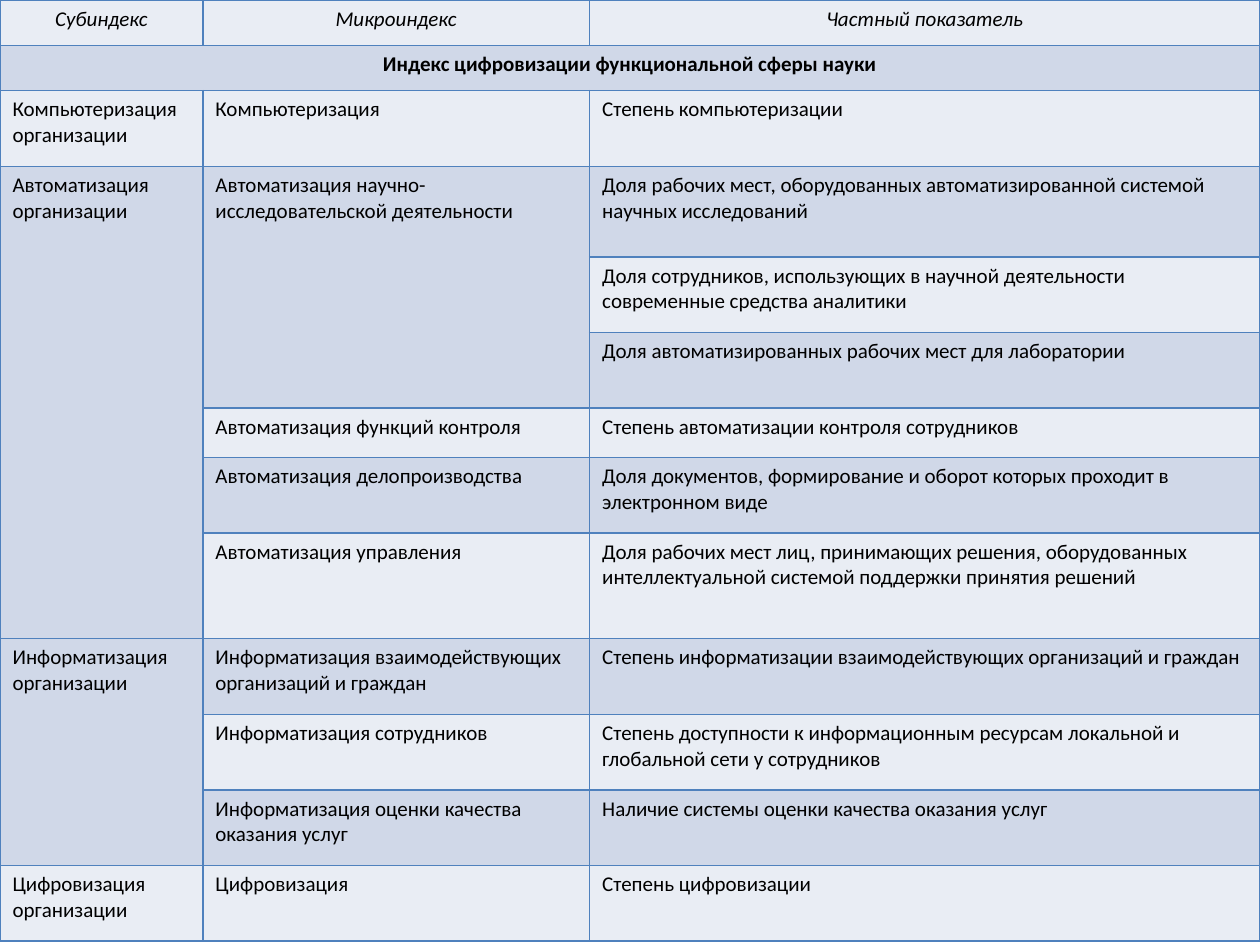
from lxml import etree
from pptx import Presentation
from pptx.dml.color import RGBColor
from pptx.enum.text import PP_ALIGN
from pptx.oxml.ns import qn
from pptx.util import Inches, Pt

CENTER, LEFT = PP_ALIGN.CENTER, PP_ALIGN.LEFT

THEME = {
    "font": "Calibri",
    "size": Pt(12),
    "text": RGBColor.from_string("000000"),
    "bands": [RGBColor.from_string("E9EDF4"), RGBColor.from_string("D0D8E8")],
    "border": "4F81BD",
    "border_width": Pt(1),
}

HEADERS = ["Субиндекс", "Микроиндекс", "Частный показатель"]
TITLE = "Индекс цифровизации функциональной сферы науки"
INDEX = [
    ("Компьютеризация организации", [
        ("Компьютеризация", ["Степень компьютеризации"]),
    ]),
    ("Автоматизация организации", [
        ("Автоматизация научно-исследовательской деятельности", [
            "Доля рабочих мест, оборудованных автоматизированной системой научных исследований",
            "Доля сотрудников, использующих в научной деятельности современные средства аналитики",
            "Доля автоматизированных рабочих мест для лаборатории",
        ]),
        ("Автоматизация функций контроля", ["Степень автоматизации контроля сотрудников"]),
        ("Автоматизация делопроизводства", [
            "Доля документов, формирование и оборот которых проходит в электронном виде",
        ]),
        ("Автоматизация управления", [
            "Доля рабочих мест лиц, принимающих решения, оборудованных "
            "интеллектуальной системой поддержки принятия решений",
        ]),
    ]),
    ("Информатизация организации", [
        ("Информатизация взаимодействующих организаций и граждан", [
            "Степень информатизации взаимодействующих организаций и граждан",
        ]),
        ("Информатизация сотрудников", [
            "Степень доступности к информационным ресурсам локальной и глобальной сети у сотрудников",
        ]),
        ("Информатизация оценки качества оказания услуг", [
            "Наличие системы оценки качества оказания услуг",
        ]),
    ]),
    ("Цифровизация организации", [
        ("Цифровизация", ["Степень цифровизации"]),
    ]),
]
COLUMN_WIDTHS = [1.61, 3.07, 5.32]
ROW_HEIGHTS = [0.36, 0.36, 0.6, 0.72, 0.6, 0.6, 0.39, 0.6, 0.84, 0.6, 0.6, 0.6, 0.6]


def add_borders(cell):
    properties = cell._tc.get_or_add_tcPr()
    for position, side in enumerate(["a:lnL", "a:lnR", "a:lnT", "a:lnB"]):
        line = etree.Element(qn(side), w=str(int(THEME["border_width"])))
        fill = etree.SubElement(line, qn("a:solidFill"))
        etree.SubElement(fill, qn("a:srgbClr"), val=THEME["border"])
        properties.insert(position, line)


def write(table, row, column, text, row_span=1, column_span=1, align=LEFT, **styles):
    cell = table.cell(row, column)
    if row_span * column_span > 1:
        cell.merge(table.cell(row + row_span - 1, column + column_span - 1))
    para = cell.text_frame.paragraphs[0]
    para.alignment = align
    span = para.add_run()
    span.text = text
    span.font.color.rgb = THEME["text"]
    formats = {"name": THEME["font"], "size": THEME["size"], "bold": False, "italic": False}
    for name, value in (formats | styles).items():
        setattr(span.font, name, value)


def fill_index(table, row):
    for subindex, microindexes in INDEX:
        height = sum(len(indicators) for _, indicators in microindexes)
        write(table, row, 0, subindex, row_span=height)
        for microindex, indicators in microindexes:
            write(table, row, 1, microindex, row_span=len(indicators))
            for indicator in indicators:
                write(table, row, 2, indicator)
                row += 1


def main():
    deck = Presentation()
    deck.slide_width, deck.slide_height = Inches(10), Inches(7.5)
    page = deck.slides.add_slide(deck.slide_layouts[6])
    table = page.shapes.add_table(
        len(ROW_HEIGHTS), len(COLUMN_WIDTHS), 0, 0, Inches(10), Inches(sum(ROW_HEIGHTS))
    ).table
    for column, width in zip(table.columns, COLUMN_WIDTHS):
        column.width = Inches(width)
    for number, (row, height) in enumerate(zip(table.rows, ROW_HEIGHTS)):
        row.height = Inches(height)
        for cell in row.cells:
            cell.fill.solid()
            cell.fill.fore_color.rgb = THEME["bands"][number % 2]
            add_borders(cell)
    for column, header in enumerate(HEADERS):
        write(table, 0, column, header, align=CENTER, italic=True)
    write(table, 1, 0, TITLE, column_span=len(HEADERS), align=CENTER, bold=True)
    fill_index(table, 2)
    deck.save("out.pptx")


if __name__ == "__main__":
    main()
